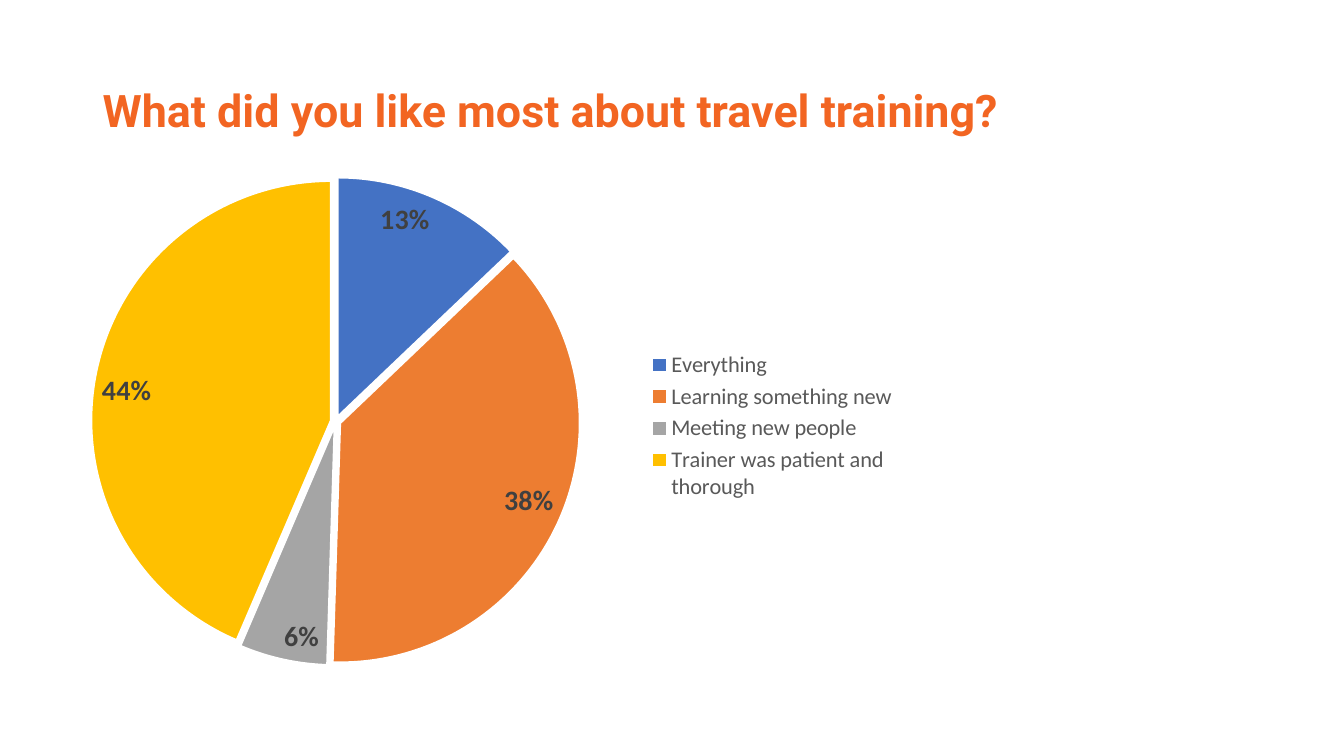
"""Build a survey slide with a title and a pie chart of answers."""
import lxml.etree
import pptx
import pptx.chart.data
import pptx.dml.color
import pptx.enum.chart
import pptx.enum.text
import pptx.oxml
import pptx.oxml.ns
import pptx.util
from pptx.util import Inches

ANSWERS = [
    ("Everything", 13, "4472C4"),
    ("Learning something new", 38, "ED7D31"),
    ("Meeting new people", 6, "A5A5A5"),
    ("Trainer was patient and thorough", 44, "FFC000"),
]


def rgb(color):
    """Return a colour from a hex string."""
    return pptx.dml.color.RGBColor.from_string(color)


def set_font(font, name="Calibri", size=10, color="000000", bold=False):
    """Apply name, size, colour and weight to a font."""
    font.name = name
    font.size = pptx.util.Pt(size)
    font.bold = bold
    font.color.rgb = rgb(color)


def add_text(s, text, left, top, width, height, **fmt):
    """Add a wrapped, vertically centred text box."""
    tf = s.shapes.add_textbox(left, top, width, height).text_frame
    tf.word_wrap = True
    tf.vertical_anchor = pptx.enum.text.MSO_ANCHOR.MIDDLE
    p = tf.paragraphs[0]
    p.line_spacing = 0.9
    r = p.add_run()
    r.text = text
    set_font(r.font, **fmt)


def add_element(parent, tag, val):
    """Append a chart element holding one value."""
    child = lxml.etree.SubElement(parent, pptx.oxml.ns.qn(tag))
    child.set("val", str(val))


def set_plot_area(chart, x, y, w, h):
    """Place the inner plot area by fractions of the chart."""
    plot_area = chart.plots[0]._element.getparent()
    for old in plot_area.findall(pptx.oxml.ns.qn("c:layout")):
        plot_area.remove(old)
    layout = lxml.etree.Element(pptx.oxml.ns.qn("c:layout"))
    manual = lxml.etree.SubElement(layout, pptx.oxml.ns.qn("c:manualLayout"))
    add_element(manual, "c:layoutTarget", "inner")
    for tag in ("c:xMode", "c:yMode"):
        add_element(manual, tag, "edge")
    for tag, val in zip(("c:x", "c:y", "c:w", "c:h"), (x, y, w, h)):
        add_element(manual, tag, val)
    plot_area.insert(0, layout)


def explode(series, percent):
    """Pull every slice out by a percentage of the radius."""
    explosion = lxml.etree.Element(pptx.oxml.ns.qn("c:explosion"))
    explosion.set("val", str(percent))
    series.format._element.find(pptx.oxml.ns.qn("c:tx")).addnext(explosion)


def add_pie(s, answers, left, top, width, height):
    """Add the exploded pie chart with percentages and a legend."""
    data = pptx.chart.data.CategoryChartData()
    data.categories = [name for name, _, _ in answers]
    data.add_series("Series 1", [value for _, value, _ in answers])
    chart = s.shapes.add_chart(
        pptx.enum.chart.XL_CHART_TYPE.PIE, left, top, width, height, data
    ).chart
    set_font(chart.font)
    chart.has_title = False
    chart.has_legend = True
    chart.legend.position = pptx.enum.chart.XL_LEGEND_POSITION.RIGHT
    chart.legend.include_in_layout = False
    set_font(chart.legend.font, size=16, color="595959")

    plot = chart.plots[0]
    plot.vary_by_categories = True
    series = plot.series[0]
    explode(series, 2)
    for i, (_, _, color) in enumerate(answers):
        fmt = series.points[i].format
        fmt.fill.solid()
        fmt.fill.fore_color.rgb = rgb(color)
        fmt.line.color.rgb = rgb("FFFFFF")
        fmt.line.width = pptx.util.Pt(1.5)

    labels = series.data_labels
    labels.show_percentage = True
    labels.show_value = False
    labels.number_format = "0%"
    labels.number_format_is_linked = False
    labels.position = pptx.enum.chart.XL_LABEL_POSITION.INSIDE_END
    set_font(labels.font, size=20, color="404040", bold=True)
    set_plot_area(chart, 0.1, 0, 0.54, 0.98)


def main():
    """Create the presentation and save it."""
    prs = pptx.Presentation()
    prs.slide_width, prs.slide_height = Inches(13.33), Inches(7.5)
    s = prs.slides.add_slide(prs.slide_layouts[6])
    add_text(s, "What did you like most about travel training?",
             Inches(0.92), Inches(0.4), Inches(11.5), Inches(1.45),
             name="Roboto", size=32, color="F26522", bold=True)
    add_pie(s, ANSWERS, Inches(0), Inches(1.75), Inches(9), Inches(4.95))
    prs.save("out.pptx")


if __name__ == "__main__":
    main()
